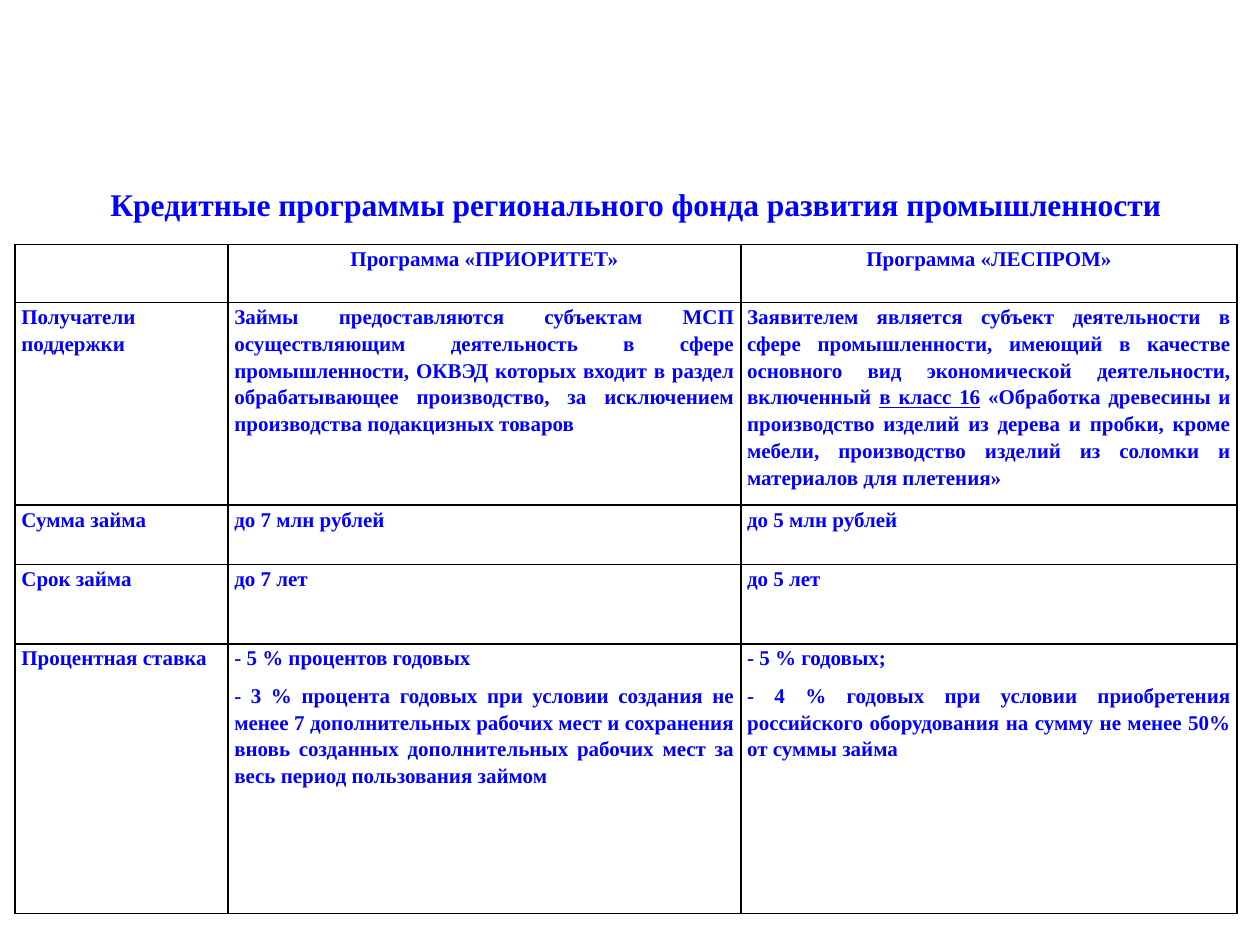
from dataclasses import dataclass

from lxml.etree import SubElement
from pptx import Presentation
from pptx.dml.color import RGBColor as RGB
from pptx.enum.text import MSO_ANCHOR as Anchor, PP_ALIGN as Align
from pptx.oxml.ns import qn
from pptx.util import Inches, Pt


@dataclass(frozen=True)
class Theme:
    font: str = "Times New Roman"
    text: str = "0000FF"
    line: str = "000000"
    title_size: int = 18
    cell_size: int = 12
    border: int = 1


THEME = Theme()
WIDTH, HEIGHT = 10, 7.5

TITLE = "Кредитные программы регионального фонда развития промышленности "

# Column widths and row heights of the table grid, in inches
COLS = [1.69, 4.07, 3.94]
ROWS = [0.46, 1.61, 0.47, 0.63, 2.14]

# A cell is a list of paragraphs; a tuple paragraph holds runs, "_" marks underline
HEADER = [[], ["Программа «ПРИОРИТЕТ»"], ["Программа «ЛЕСПРОМ»"]]
RECIPIENTS = [
    ["Получатели поддержки"],
    ["Займы предоставляются субъектам МСП осуществляющим деятельность в сфере "
     "промышленности, ОКВЭД которых входит в раздел обрабатывающее производство, "
     "за исключением производства подакцизных товаров"],
    [("Заявителем является субъект деятельности в сфере промышленности, имеющий "
      "в качестве основного вид экономической деятельности, включенный ",
      "_в класс 16",
      " «Обработка древесины и производство изделий из дерева и пробки, кроме "
      "мебели, производство изделий из соломки и материалов для плетения»")],
]
TERMS = [
    [["Сумма займа"], ["до 7 млн рублей"], ["до 5 млн рублей"]],
    [["Срок займа"], ["до 7 лет"], ["до 5 лет"]],
    [["Процентная ставка"],
     ["- 5 % процентов годовых",
      "- 3 % процента годовых при условии создания не менее 7 дополнительных "
      "рабочих мест и сохранения вновь созданных дополнительных рабочих мест "
      "за весь период пользования займом"],
     ["- 5 % годовых;",
      "- 4 % годовых при условии приобретения российского оборудования на сумму "
      "не менее 50% от суммы займа"]],
]


def write(tf, paragraphs, size=THEME.cell_size, align=Align.LEFT, spacing=1.0, after=0):
    """Fill a text frame with paragraphs in the theme's bold style."""
    tf.word_wrap = True
    for i, runs in enumerate(paragraphs):
        p = tf.paragraphs[0] if i == 0 else tf.add_paragraph()
        p.alignment, p.line_spacing, p.space_after = align, spacing, Pt(after)
        for text in (runs,) if isinstance(runs, str) else runs:
            r = p.add_run()
            r.text = text.removeprefix("_")
            r.font.name, r.font.size, r.font.bold = THEME.font, Pt(size), True
            r.font.color.rgb = RGB.from_string(THEME.text)
            if text.startswith("_"):
                r.font.underline = True


def add_borders(cell):
    """Draw all four sides of a cell; sides must precede the fill in the XML."""
    props = cell._tc.get_or_add_tcPr()
    for i, side in enumerate(("lnL", "lnR", "lnT", "lnB")):
        ln = SubElement(props, qn(f"a:{side}"), w=str(Pt(THEME.border)))
        fill = SubElement(ln, qn("a:solidFill"))
        SubElement(fill, qn("a:srgbClr"), val=THEME.line)
        props.insert(i, ln)


def add_title(s):
    box = s.shapes.add_textbox(Inches(0.75), Inches(1.42), Inches(8.66), Inches(0.4))
    write(box.text_frame, [TITLE], size=THEME.title_size, align=Align.CENTER)


def add_cell(cell, paragraphs, **style):
    cell.margin_left = cell.margin_right = Inches(0.05)
    cell.margin_top = cell.margin_bottom = 0
    cell.vertical_anchor = Anchor.TOP
    cell.fill.background()
    add_borders(cell)
    write(cell.text_frame, paragraphs, spacing=1.15, **style)


def add_programs(s):
    table = s.shapes.add_table(len(ROWS), len(COLS), Inches(0.12), Inches(1.94),
                               Inches(sum(COLS)), Inches(sum(ROWS))).table
    table.first_row = table.horz_banding = False
    for col, width in zip(table.columns, COLS):
        col.width = Inches(width)
    for row, height in zip(table.rows, ROWS):
        row.height = Inches(height)

    for i, row in enumerate([HEADER, RECIPIENTS, *TERMS]):
        for j, paragraphs in enumerate(row):
            if i == 0:
                align = Align.CENTER
            else:
                align = Align.LEFT if j == 0 else Align.JUSTIFY
            add_cell(table.cell(i, j), paragraphs, align=align, after=6 if i > 1 else 0)


def main():
    prs = Presentation()
    prs.slide_width, prs.slide_height = Inches(WIDTH), Inches(HEIGHT)
    s = prs.slides.add_slide(prs.slide_layouts[6])
    add_title(s)
    add_programs(s)
    prs.save("out.pptx")


if __name__ == "__main__":
    main()
